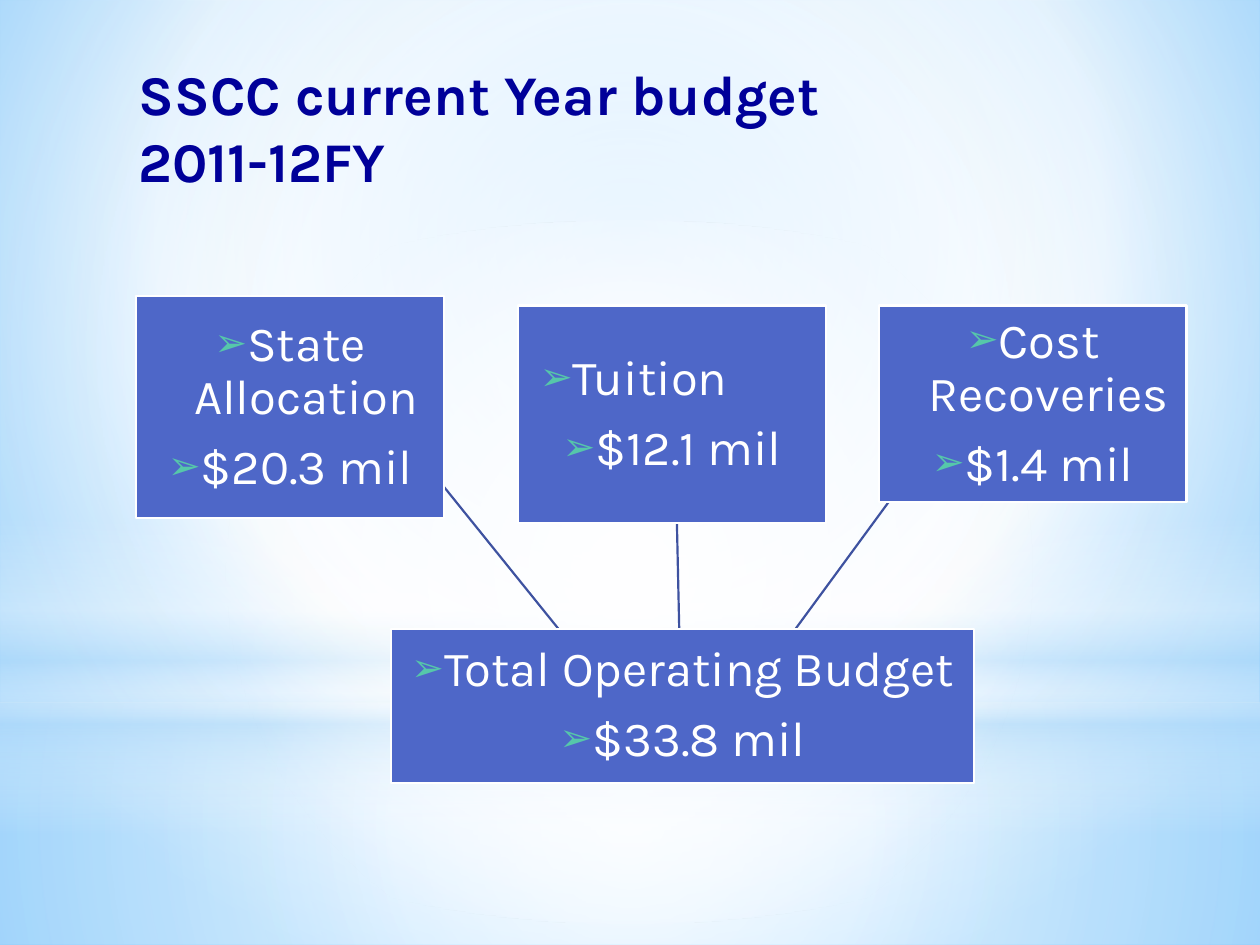
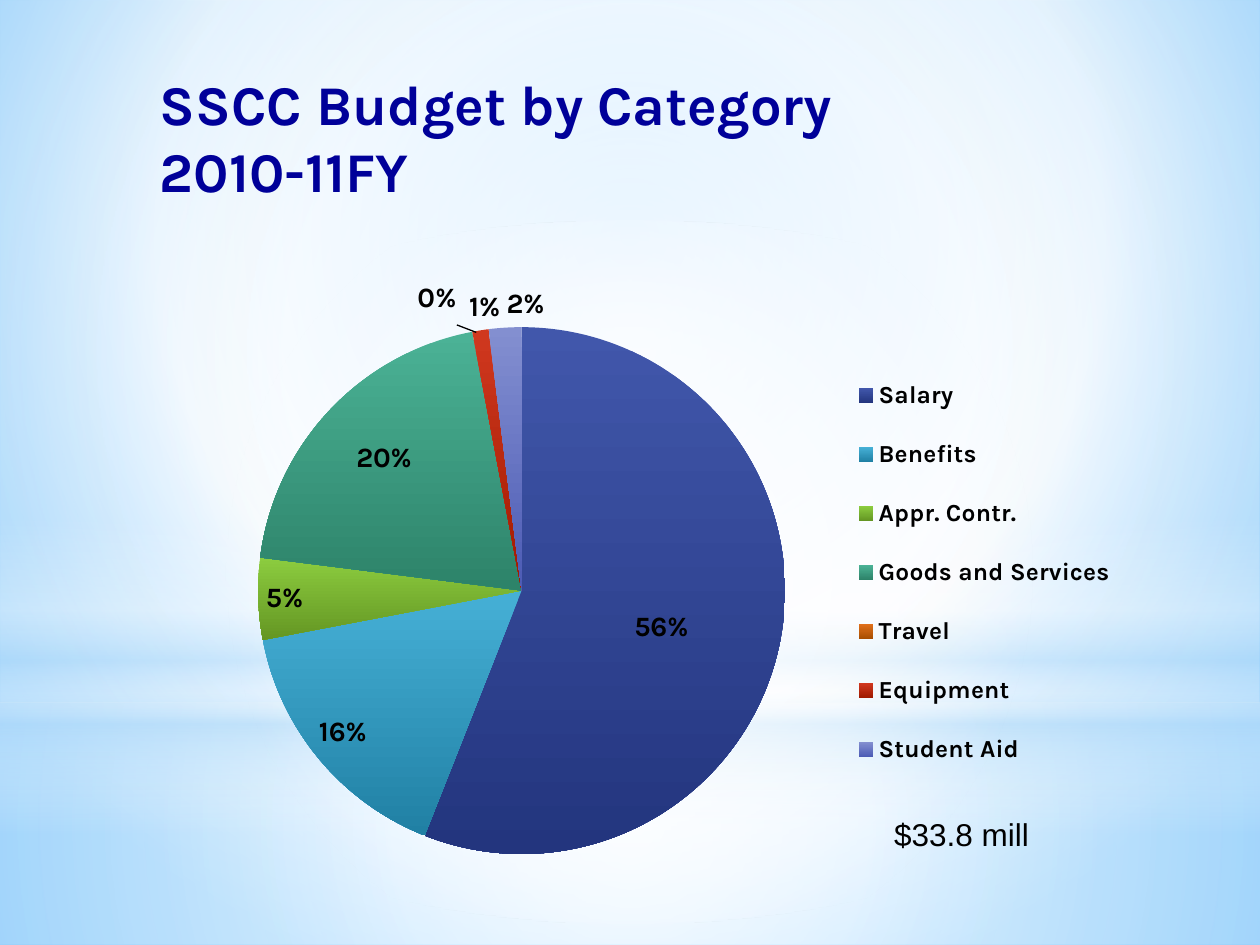
"""Build two budget slides: the funding sources and the spending by category."""
from dataclasses import dataclass

from lxml.etree import SubElement
from pptx import Presentation
from pptx.chart.data import CategoryChartData
from pptx.dml.color import RGBColor
from pptx.enum.chart import XL_CHART_TYPE, XL_LABEL_POSITION, XL_LEGEND_POSITION
from pptx.enum.shapes import MSO_CONNECTOR, MSO_SHAPE
from pptx.enum.text import MSO_ANCHOR, MSO_AUTO_SIZE, PP_ALIGN
from pptx.oxml import parse_xml
from pptx.oxml.ns import nsdecls, qn
from pptx.util import Cm, Pt

FONT = "Karla"
NAVY, BLUE, LINE, MINT = "000099", "4E67C8", "3E52A0", "56C7AA"
WHITE, BLACK, SKY = "FFFFFF", "000000", "B4DCFA"
CENTRE = (50, 50, 50, 50)


@dataclass(frozen=True)
class Area:
    """A rectangle in centimetres."""
    left: float
    top: float
    width: float
    height: float

    def emu(self) -> tuple:
        """Return the four lengths for python-pptx."""
        return Cm(self.left), Cm(self.top), Cm(self.width), Cm(self.height)


@dataclass(frozen=True)
class Gradient:
    """Stops of position, colour and opacity, around a focus or downwards."""
    stops: tuple
    focus: tuple | None = CENTRE


@dataclass(frozen=True)
class Band:
    """A translucent background shape."""
    shape: MSO_SHAPE
    area: Area
    gradient: Gradient


@dataclass(frozen=True)
class BudgetBox:
    """A box with a name, an amount and a right indent of the name."""
    name: str
    amount: str
    area: Area
    name_indent: float = 0


@dataclass(frozen=True)
class Category:
    """A pie slice shaded from light to dark, with the shift of its label."""
    name: str
    share: int
    light: str
    dark: str
    label_shift: tuple | None = None


BACKGROUND = Gradient(((0, "9ED5FF", 100), (60, WHITE, 100), (100, "5BB9FF", 100)),
                      (20, 10, 20, 60))
BANDS = (
    Band(MSO_SHAPE.RECTANGLE, Area(0, 14.17, 25.4, 4.88),
         Gradient(((0, WHITE, 91), (37, WHITE, 76), (100, SKY, 79)))),
    Band(MSO_SHAPE.RECTANGLE, Area(0, 0, 25.4, 14.17),
         Gradient(((0, WHITE, 89), (48, WHITE, 62), (100, SKY, 79)))),
    Band(MSO_SHAPE.RECTANGLE, Area(0, 10.46, 25.4, 6.35),
         Gradient(((0, WHITE, 0), (29, WHITE, 30), (45, SKY, 40),
                   (55, WHITE, 26), (65, SKY, 60), (100, WHITE, 0)), None)),
    Band(MSO_SHAPE.OVAL, Area(0, 4.45, 25.4, 14.17),
         Gradient(((0, WHITE, 100), (56, WHITE, 0)))),
)
TOTAL = BudgetBox("Total Operating Budget", "$33.8 mil", Area(7.89, 12.68, 11.74, 3.1))
SOURCES = (
    BudgetBox("State Allocation", "$20.3 mil", Area(2.75, 5.97, 6.2, 4.47)),
    BudgetBox("Tuition", "$12.1 mil", Area(10.45, 6.16, 6.2, 4.39), 1.55),
    BudgetBox("Cost Recoveries", "$1.4 mil", Area(17.72, 6.16, 6.2, 3.96)),
)
CATEGORIES = (
    Category("Salary", 56, "4157AB", "23357E", (0.01, 0.02)),
    Category("Benefits", 16, "46B0D6", "2080A4"),
    Category("Appr. Contr.", 5, "8CCC3F", "649623"),
    Category("Goods and Services", 20, "4BB296", "2D8369", (-0.04, -0.07)),
    Category("Travel", 0, "E0701B", "A84E00"),
    Category("Equipment", 1, "D0381F", "A01A00", (0.02, 0)),
    Category("Student Aid", 2, "838FD0", "4C5BB5", (0.02, 0)),
)


def rgb(color: str) -> RGBColor:
    """Turn a hex string into a colour."""
    return RGBColor.from_string(color)


def style_font(font, size: float, color: str, bold: bool = False, name: str = FONT) -> None:
    """Set the face, size, colour and weight of a font."""
    font.name, font.size, font.bold = name, Pt(size), bold
    font.color.rgb = rgb(color)


def add_run(p, text: str, size: float, color: str, bold: bool = False, name: str = FONT) -> None:
    """Append one formatted run to a paragraph."""
    r = p.add_run()
    r.text = text
    style_font(r.font, size, color, bold, name)


def apply_gradient(element, gradient: Gradient) -> None:
    """Replace the first solid fill of an element by a gradient."""
    stops = "".join(
        f'<a:gs pos="{pos * 1000}"><a:srgbClr val="{color}">'
        f'<a:alpha val="{alpha * 1000}"/></a:srgbClr></a:gs>'
        for pos, color, alpha in gradient.stops)
    if gradient.focus is None:
        course = '<a:lin ang="5400000" scaled="0"/>'
    else:
        sides = " ".join(f'{side}="{value * 1000}"'
                         for side, value in zip("ltrb", gradient.focus))
        course = f'<a:path path="circle"><a:fillToRect {sides}/></a:path>'
    solid = element.find(".//" + qn("a:solidFill"))
    solid.getparent().replace(solid, parse_xml(
        f'<a:gradFill {nsdecls("a")} rotWithShape="1"><a:gsLst>{stops}</a:gsLst>'
        f'{course}</a:gradFill>'))


def add_shape(slide, shape: MSO_SHAPE, area: Area, color: str):
    """Draw a filled preset shape without a shadow."""
    sp = slide.shapes.add_shape(shape, *area.emu())
    sp.shadow.inherit = False
    sp.fill.solid()
    sp.fill.fore_color.rgb = rgb(color)
    return sp


def decorate_master(prs, slide) -> None:
    """Give the master its background and its translucent bands."""
    master = prs.slide_master
    master.background.fill.solid()
    apply_gradient(master.element, BACKGROUND)
    for i, band in enumerate(BANDS):
        sp = add_shape(slide, band.shape, band.area, WHITE)
        sp.line.fill.background()
        apply_gradient(sp.element, band.gradient)
        sp.element.find(".//" + qn("p:cNvPr")).set("id", str(20 + i))
        master.shapes.element.insert(2 + i, sp.element)


def set_title(slide, lines: tuple, area: Area) -> None:
    """Place and format the title placeholder."""
    title = slide.shapes.title
    title.left, title.top, title.width, title.height = area.emu()
    tf = title.text_frame
    tf.auto_size, tf.vertical_anchor = MSO_AUTO_SIZE.NONE, MSO_ANCHOR.TOP
    p = tf.paragraphs[0]
    p.alignment = PP_ALIGN.LEFT
    for i, line in enumerate(lines):
        if i:
            p.add_line_break()
        add_run(p, line, 32, NAVY, True)


def add_bullet(p, right_indent: float) -> None:
    """Give a paragraph a hanging arrow bullet and a right indent."""
    pPr = p._p.get_or_add_pPr()
    for key, length in (("marL", 0.64), ("marR", right_indent), ("indent", -0.64)):
        pPr.set(key, str(Cm(length)))
    SubElement(SubElement(pPr, qn("a:buClr")), qn("a:srgbClr")).set("val", MINT)
    SubElement(pPr, qn("a:buSzPct")).set("val", "80000")
    SubElement(pPr, qn("a:buFont")).set("typeface", "Arial")
    SubElement(pPr, qn("a:buChar")).set("char", "➢")


def add_budget_box(slide, box: BudgetBox) -> None:
    """Draw a box with its two bulleted lines."""
    sp = add_shape(slide, MSO_SHAPE.RECTANGLE, box.area, BLUE)
    sp.line.color.rgb, sp.line.width = rgb(WHITE), Pt(1.25)
    tf = sp.text_frame
    tf.word_wrap, tf.vertical_anchor = True, MSO_ANCHOR.MIDDLE
    tf.margin_left = tf.margin_top = tf.margin_right = tf.margin_bottom = Cm(0.05)
    for i, (text, indent) in enumerate(((box.name, box.name_indent), (box.amount, 0))):
        p = tf.add_paragraph() if i else tf.paragraphs[0]
        p.alignment, p.line_spacing, p.space_after = PP_ALIGN.CENTER, 0.9, Pt(9.8)
        add_bullet(p, indent)
        add_run(p, text, 28, WHITE)


def add_line(slide, ends: tuple, color: str, width: float) -> None:
    """Draw a straight line between two points in centimetres."""
    line = slide.shapes.add_connector(MSO_CONNECTOR.STRAIGHT, *map(Cm, ends))
    line.line.color.rgb, line.line.width = rgb(color), Pt(width)
    SubElement(line.element.spPr, qn("a:effectLst"))


def add_link(slide, source: Area, total: Area) -> None:
    """Join the top of a source to the foot of the total."""
    add_line(slide, (total.left + total.width / 2, total.top + total.height,
                     source.left + source.width / 2, source.top), LINE, 1.25)


def set_layout(element, index: int, inner: bool = False, **places: float) -> None:
    """Fix a chart part at fractions of the chart area."""
    for old in element.findall(qn("c:layout")):
        element.remove(old)
    target = '<c:layoutTarget val="inner"/>' if inner else ""
    modes = '<c:xMode val="edge"/><c:yMode val="edge"/>' if "w" in places else ""
    sizes = "".join(f'<c:{tag} val="{value}"/>' for tag, value in places.items())
    element.insert(index, parse_xml(
        f'<c:layout {nsdecls("c")}><c:manualLayout>{target}{modes}{sizes}'
        f'</c:manualLayout></c:layout>'))


def add_pie(slide, area: Area) -> None:
    """Draw the pie of spending categories."""
    data = CategoryChartData()
    data.categories = [c.name for c in CATEGORIES]
    data.add_series("Series 1", [c.share for c in CATEGORIES])
    chart = slide.shapes.add_chart(XL_CHART_TYPE.PIE, *area.emu(), data).chart
    chart.has_title = False
    style_font(chart.font, 10, BLACK)
    chart.has_legend = True
    chart.legend.position = XL_LEGEND_POSITION.RIGHT
    chart.legend.include_in_layout = False
    style_font(chart.legend.font, 14, BLACK, True)
    plot = chart.plots[0]
    plot.vary_by_categories = True
    series = plot.series[0]
    labels = series.data_labels
    labels.show_percentage, labels.show_value = True, False
    labels.number_format, labels.number_format_is_linked = "0%", False
    labels.position = XL_LABEL_POSITION.BEST_FIT
    style_font(labels.font, 16, BLACK, True)
    for i, category in enumerate(CATEGORIES):
        point = series.points[i]
        fill = point.format.fill
        fill.gradient()
        fill.gradient_angle = 270
        for stop, color in zip(fill.gradient_stops, (category.light, category.dark)):
            stop.color.rgb = rgb(color)
        if category.label_shift:
            style_font(point.data_label.font, 16, BLACK, True)
            point.data_label.position = (XL_LABEL_POSITION.CENTER if category.share >= 20
                                         else XL_LABEL_POSITION.OUTSIDE_END)
    shifts = [c.label_shift for c in CATEGORIES if c.label_shift]
    for label, (x, y) in zip(chart.element.iter(qn("c:dLbl")), shifts):
        label.find(qn("c:showVal")).set("val", "0")
        label.find(qn("c:showPercent")).set("val", "1")
        set_layout(label, 1, x=x, y=y)
    set_layout(chart.element.find(".//" + qn("c:plotArea")), 0, True,
               x=0.1, y=0.09, w=0.52, h=0.88)
    set_layout(chart.element.find(".//" + qn("c:legend")), 1, x=0.66, y=0.13, w=0.29, h=0.74)


def add_note(slide, text: str, area: Area, size: float, bold: bool, name: str) -> None:
    """Add a centred line of plain text."""
    tf = slide.shapes.add_textbox(*area.emu()).text_frame
    tf.word_wrap = True
    p = tf.paragraphs[0]
    p.alignment, p.space_before = PP_ALIGN.CENTER, Pt(3.6)
    add_run(p, text, size, BLACK, bold, name)


def main() -> None:
    """Build and save the presentation."""
    prs = Presentation()
    prs.slide_width, prs.slide_height = Cm(25.4), Cm(19.05)
    sources, spending = (prs.slides.add_slide(prs.slide_layouts[5]) for _ in range(2))
    decorate_master(prs, sources)

    set_title(sources, ("SSCC current Year budget ", "2011-12FY"),
              Area(2.54, 1.07, 21.39, 2.34))
    for box in SOURCES:
        add_link(sources, box.area, TOTAL.area)
    for box in (TOTAL, *SOURCES):
        add_budget_box(sources, box)

    set_title(spending, ("SSCC Budget by Category", "2010-11FY"),
              Area(2.97, 1.27, 20.96, 2.74))
    add_pie(spending, Area(2.97, 5.51, 20.96, 12.07))
    add_note(spending, "0%", Area(7.81, 5.52, 2, 1), 16, True, FONT)
    add_line(spending, (9.21, 6.55, 9.6, 6.7), BLACK, 0.75)
    add_note(spending, "$33.8 mill", Area(16.31, 16.31, 6.15, 1.02), 18, False, "Arial")
    prs.save("out.pptx")


if __name__ == "__main__":
    main()
